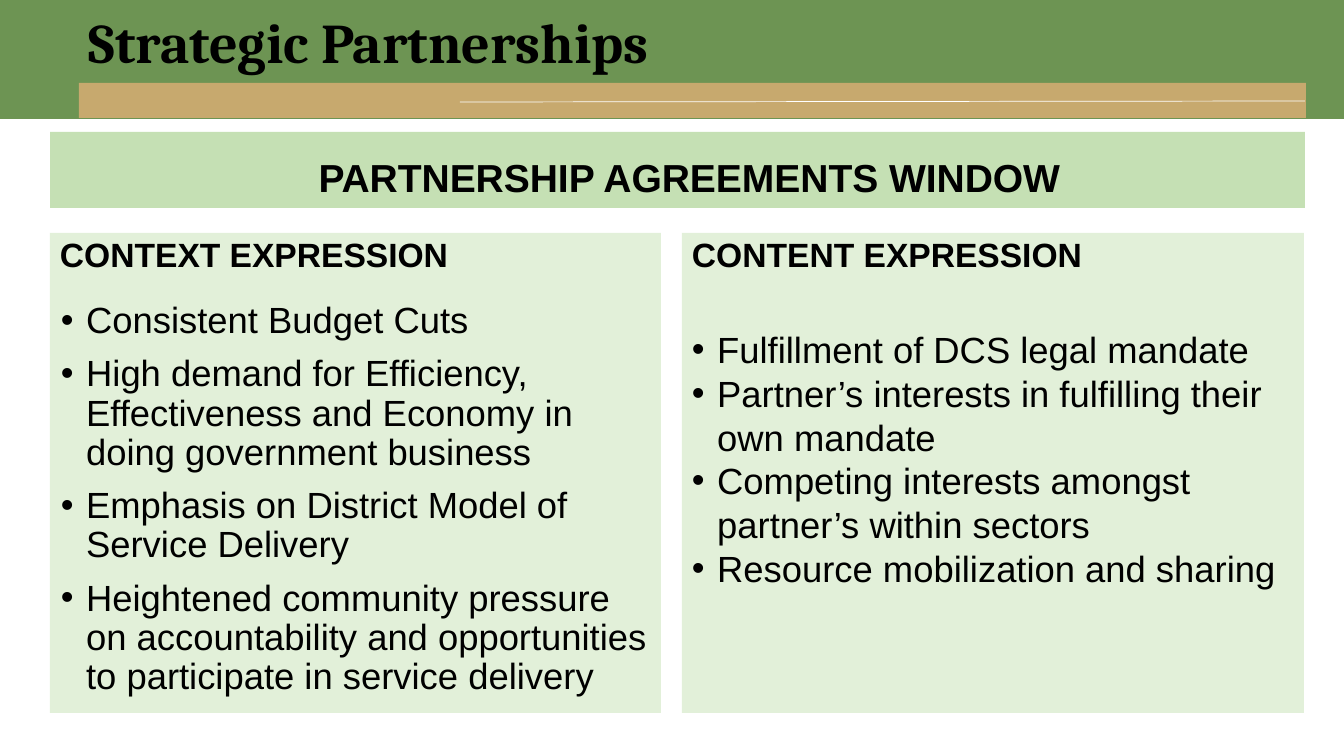
from lxml import etree
from pptx import Presentation
from pptx import util as u
from pptx.dml.color import RGBColor
from pptx.enum import shapes, text
from pptx.oxml.ns import qn

PX = 914400 / 100.8
BLACK = RGBColor(0, 0, 0)
WHITE = RGBColor(255, 255, 255)
GREEN = RGBColor(0x54, 0x82, 0x35)
TAN = RGBColor(0xC7, 0xA9, 0x6E)
BANNER = RGBColor(0xC5, 0xE0, 0xB4)
PANEL = RGBColor(0xE2, 0xF0, 0xD9)

CONTEXT = [
    "Consistent Budget Cuts",
    "High demand for Efficiency, Effectiveness and Economy in doing government business",
    "Emphasis on District Model of Service Delivery",
    "Heightened community pressure on accountability and opportunities "
    "to participate in service delivery",
]
CONTENT = [
    "Fulfillment of DCS legal mandate",
    "Partner’s interests in fulfilling their own mandate",
    "Competing interests amongst partner’s within sectors",
    "Resource mobilization and sharing",
]


def px(n):
    return u.Emu(round(n * PX))


def add_box(s, x, y, w, h, color, alpha=None):
    sp = s.shapes.add_shape(shapes.MSO_SHAPE.RECTANGLE, px(x), px(y), px(w), px(h))
    sp.shadow.inherit = False
    sp.fill.solid()
    sp.fill.fore_color.rgb = color
    sp.line.fill.background()
    if alpha:
        clr = sp.fill._xPr.find(qn("a:solidFill"))[0]
        etree.SubElement(clr, qn("a:alpha")).set("val", str(alpha * 1000))
    return sp


def add_text_box(s, x, y, w, h):
    return s.shapes.add_textbox(px(x), px(y), px(w), px(h))


def set_frame(sp, anchor=text.MSO_ANCHOR.TOP, left=10, top=5):
    tf = sp.text_frame
    tf.word_wrap = True
    tf.auto_size = text.MSO_AUTO_SIZE.NONE
    tf.vertical_anchor = anchor
    tf.margin_left, tf.margin_right = px(left), px(10)
    tf.margin_top, tf.margin_bottom = px(top), px(5)
    return tf


def write(tf, words, size=26, font="Arial", bold=False, align=text.PP_ALIGN.LEFT,
          spacing=0.9, before=0, bullet=False):
    """Fill the empty first paragraph, or append a new one."""
    p = tf.paragraphs[-1]
    if p.runs:
        p = tf.add_paragraph()
    p.alignment = align
    p.line_spacing = spacing
    p.space_before = u.Pt(before)
    if bullet:
        pPr = p._p.get_or_add_pPr()
        pPr.set("marL", "228600")
        pPr.set("indent", "-228600")
        etree.SubElement(pPr, qn("a:buFont")).set("typeface", "Arial")
        etree.SubElement(pPr, qn("a:buChar")).set("char", "•")
    r = p.add_run()
    r.text = words
    r.font.name, r.font.size, r.font.bold = font, u.Pt(size), bold
    r.font.color.rgb = BLACK


def add_rule(s, x1, y1, x2, y2):
    line = s.shapes.add_connector(shapes.MSO_CONNECTOR.STRAIGHT, px(x1), px(y1), px(x2), px(y2))
    line.line.color.rgb = WHITE
    line.line.width = u.Pt(0.5)
    etree.SubElement(line._element.spPr, qn("a:effectLst"))


def add_header(s):
    add_box(s, 0, 0, 1344, 119, GREEN, alpha=85)
    add_box(s, 79, 83, 1227, 35, TAN)
    add_rule(s, 460, 102, 1305, 101)
    tf = set_frame(add_text_box(s, 79, 0, 1265, 91), text.MSO_ANCHOR.MIDDLE)
    write(tf, "Strategic Partnerships", size=40, font="Cambria", bold=True)


def format_title(sp):
    sp.left, sp.top, sp.width, sp.height = px(50), px(132), px(1255), px(76)
    sp.fill.solid()
    sp.fill.fore_color.rgb = BANNER
    tf = set_frame(sp, text.MSO_ANCHOR.MIDDLE, left=34, top=25)
    write(tf, "PARTNERSHIP AGREEMENTS WINDOW", size=27.9, bold=True,
          align=text.PP_ALIGN.CENTER)


def add_panel(s, x, w, heading):
    tf = set_frame(add_box(s, x, 233, w, 480, PANEL))
    write(tf, heading, size=24, bold=True)
    return tf


def main():
    prs = Presentation()
    prs.slide_width, prs.slide_height = px(1344), px(756)
    s = prs.slides.add_slide(prs.slide_layouts[5])
    add_header(s)
    format_title(s.shapes.title)

    add_panel(s, 50, 611, "CONTEXT EXPRESSION")
    tf = set_frame(add_text_box(s, 51, 297, 609, 406))
    for words in CONTEXT:
        write(tf, words, before=10, bullet=True)

    tf = add_panel(s, 682, 622, "CONTENT EXPRESSION")
    for i, words in enumerate(CONTENT):
        write(tf, words, spacing=1.0, before=0 if i else 38, bullet=True)
    prs.save("out.pptx")


if __name__ == "__main__":
    main()
